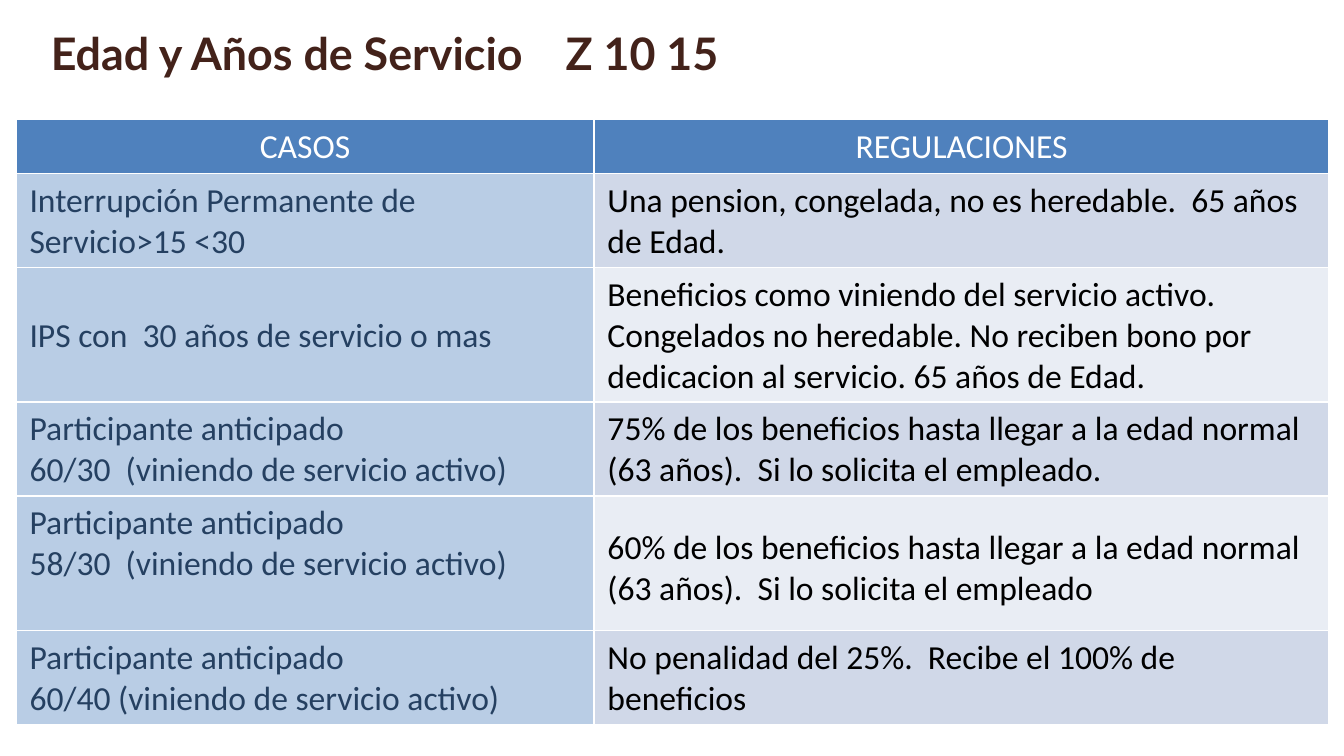
from dataclasses import dataclass

from lxml.etree import SubElement
from pptx import Presentation
from pptx.dml.color import RGBColor
from pptx.enum.text import MSO_AUTO_SIZE, PP_ALIGN
from pptx.oxml.ns import qn
from pptx.slide import Slide
from pptx.table import _Cell
from pptx.text.text import _Paragraph
from pptx.util import Inches, Pt

WHITE = "FFFFFF"
HEADER_FILL = "4F81BD"
CASE_FILL = "B9CDE5"
CASE_TEXT = "254061"
BAND_FILLS = ("D0D8E8", "E9EDF4")
COLUMN_WIDTHS = (4.3, 5.47)
HEADER_HEIGHT = 0.4
TOP_MARGIN = 0.05


@dataclass(frozen=True)
class Case:
    lines: tuple[str, ...]
    regulation: str
    height: float = 0.7
    case_top: float = TOP_MARGIN
    regulation_top: float = TOP_MARGIN


@dataclass(frozen=True)
class CellStyle:
    fill: str
    color: str
    alignment: PP_ALIGN = PP_ALIGN.LEFT


CASES = (
    Case(
        ("Interrupción Permanente de Servicio>15 <30",),
        "Una pension, congelada, no es heredable.  65 años de Edad.",
    ),
    Case(
        ("IPS con  30 años de servicio o mas",),
        "Beneficios como viniendo del servicio activo.  Congelados no heredable. "
        "No reciben bono por dedicacion al servicio. 65 años de Edad.",
        height=1,
        case_top=0.36,
    ),
    Case(
        ("Participante anticipado", "60/30  (viniendo de servicio activo)"),
        "75% de los beneficios hasta llegar a la edad normal (63 años).  "
        "Si lo solicita el empleado.",
    ),
    Case(
        ("Participante anticipado", "58/30  (viniendo de servicio activo)"),
        "60% de los beneficios hasta llegar a la edad normal (63 años).  "
        "Si lo solicita el empleado",
        height=1,
        regulation_top=0.23,
    ),
    Case(
        ("Participante anticipado", "60/40 (viniendo de servicio activo)"),
        "No penalidad del 25%.  Recibe el 100% de beneficios",
    ),
)


def rgb(value: str) -> RGBColor:
    return RGBColor.from_string(value)


def add_run(paragraph: _Paragraph, text: str, font_name: str, size: float,
            color: str, bold: bool = False) -> None:
    run = paragraph.add_run()
    run.text = text
    run.font.name = font_name
    run.font.size = Pt(size)
    run.font.bold = bold
    run.font.color.rgb = rgb(color)


def add_borders(cell: _Cell) -> None:
    properties = cell._tc.get_or_add_tcPr()
    for side in "LRTB":
        line = SubElement(properties, qn(f"a:ln{side}"), w=str(Pt(1)))
        solid = SubElement(line, qn("a:solidFill"))
        SubElement(solid, qn("a:srgbClr"), val=WHITE)


def fill_cell(cell: _Cell, lines: tuple[str, ...], style: CellStyle,
              top: float = TOP_MARGIN) -> None:
    add_borders(cell)
    cell.fill.solid()
    cell.fill.fore_color.rgb = rgb(style.fill)
    cell.margin_top = Inches(top)
    frame = cell.text_frame
    for index, line in enumerate(lines):
        paragraph = frame.add_paragraph() if index else frame.paragraphs[0]
        paragraph.alignment = style.alignment
        add_run(paragraph, line, "Calibri", 18, style.color)


def add_title(slide: Slide) -> None:
    shape = slide.shapes.add_textbox(Inches(0.28), Inches(0.14), Inches(6.3), Inches(0.5))
    frame = shape.text_frame
    frame.word_wrap = True
    frame.auto_size = MSO_AUTO_SIZE.SHAPE_TO_FIT_TEXT
    paragraph = frame.paragraphs[0]
    tabs = SubElement(paragraph._p.get_or_add_pPr(), qn("a:tabLst"))
    SubElement(tabs, qn("a:tab"), pos=str(Inches(3.83)), algn="l")
    add_run(paragraph, "Edad y Años de Servicio\tZ 10 15", "Lato", 24, "43221A", True)


def add_cases_table(slide: Slide) -> None:
    heights = [HEADER_HEIGHT, *(case.height for case in CASES)]
    table = slide.shapes.add_table(
        len(heights), len(COLUMN_WIDTHS), Inches(0.12), Inches(0.89),
        Inches(sum(COLUMN_WIDTHS)), Inches(sum(heights)),
    ).table
    for column, width in zip(table.columns, COLUMN_WIDTHS):
        column.width = Inches(width)
    for row, height in zip(table.rows, heights):
        row.height = Inches(height)

    header_style = CellStyle(HEADER_FILL, WHITE, PP_ALIGN.CENTER)
    for index, heading in enumerate(("CASOS", "REGULACIONES")):
        fill_cell(table.cell(0, index), (heading,), header_style)

    case_style = CellStyle(CASE_FILL, CASE_TEXT)
    for index, case in enumerate(CASES):
        regulation_style = CellStyle(BAND_FILLS[index % 2], "000000")
        fill_cell(table.cell(index + 1, 0), case.lines, case_style, case.case_top)
        fill_cell(table.cell(index + 1, 1), (case.regulation,), regulation_style,
                  case.regulation_top)


def main() -> None:
    presentation = Presentation()
    presentation.slide_width = Inches(10)
    presentation.slide_height = Inches(10 * 9 / 16)
    slide = presentation.slides.add_slide(presentation.slide_layouts[6])
    add_title(slide)
    add_cases_table(slide)
    presentation.save("out.pptx")


if __name__ == "__main__":
    main()
